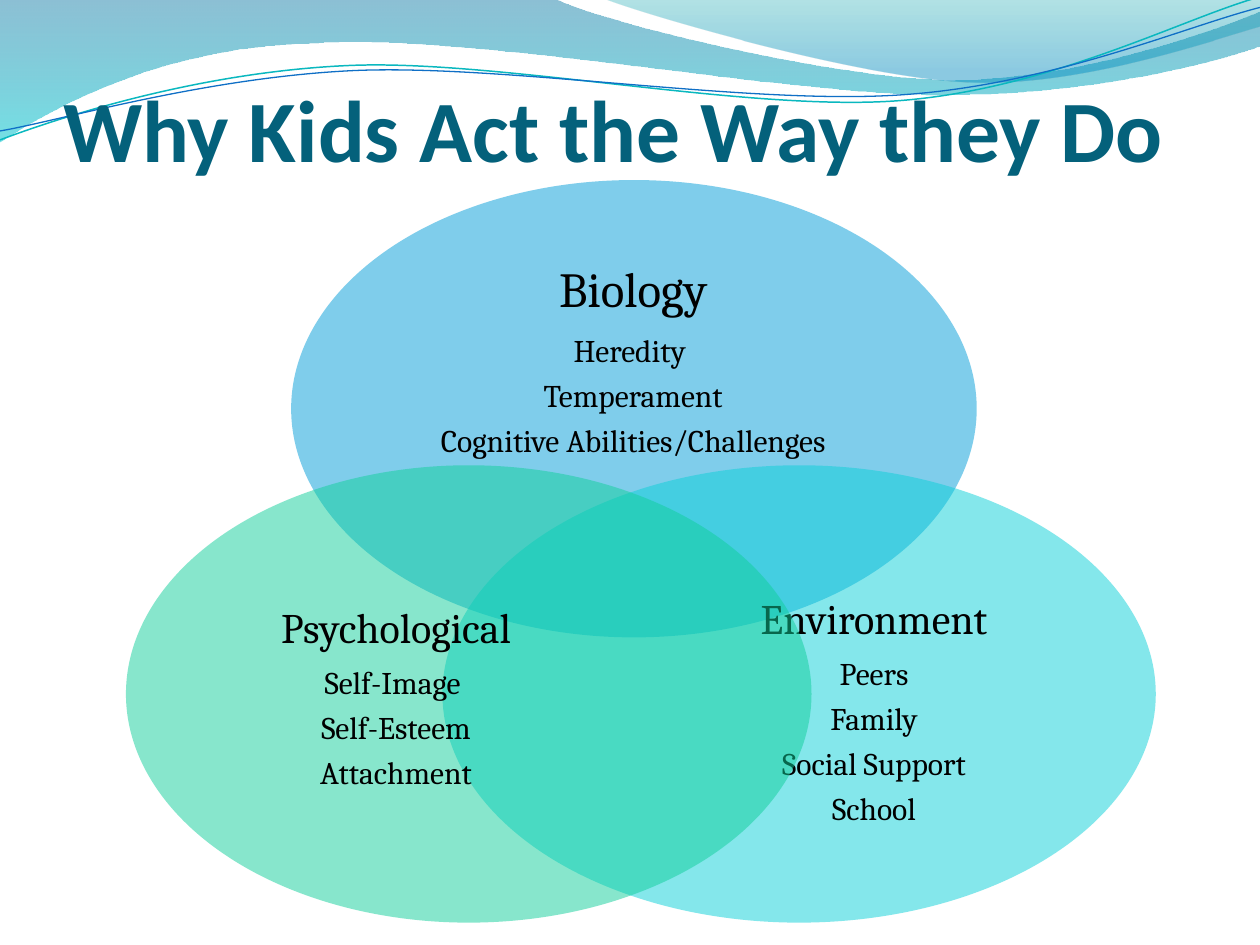
from math import cos, radians, sin

from lxml.etree import SubElement
from pptx import Presentation
from pptx.dml.color import RGBColor
from pptx.enum.shapes import MSO_SHAPE as Shape
from pptx.enum.text import MSO_ANCHOR as Anchor, MSO_AUTO_SIZE as AutoSize, PP_ALIGN as Align
from pptx.oxml.ns import qn
from pptx.util import Cm, Pt

STRAND_TILT = 2.7
STRAND_CENTER = (12.67, 1.48)

BACK_WAVE = [
    [(0, 0)],
    [(11.18, -0.03)],
    [(12.09, 0.43), (16.87, 1.6), (19.25, 1.6)],
    [(21.67, 1.6), (24.33, 0.66), (25.4, 0.23)],
    [(25.43, 0.91)],
    [(24.97, 1.12), (22.1, 1.93), (18.95, 1.91)],
    [(15.8, 1.91), (9.7, 0.71), (6.53, 0.86)],
    [(3.28, 0.91), (1.17, 2.11), (-0.03, 2.87)],
]
FRONT_WAVE = [
    [(12.17, -0.03)],
    [(12.93, 0.28), (17.32, 1.57), (19.53, 1.65)],
    [(21.74, 1.75), (24.41, 0.81), (25.4, 0.53)],
    [(25.4, 0)],
]
TEAL_STRAND = [
    [(0, 2.82)],
    [(1.22, 2.36), (4.01, 1.45), (7.04, 1.32)],
    [(10.03, 1.19), (15.06, 2.26), (18.11, 2.03)],
    [(21.16, 1.8), (23.83, 0.38), (25.35, -0.05)],
]
BLUE_STRAND = [
    [(0, 2.64)],
    [(1.19, 2.44), (4.17, 1.55), (7.19, 1.42)],
    [(10.24, 1.3), (15.16, 2.13), (18.21, 1.91)],
    [(21.23, 1.7), (23.9, 0.53), (25.4, 0.15)],
]

FACTORS = [
    dict(oval=(5.87, 3.63, 13.82, 9.22), color="009DD9",
         label=(7.7, 5.23, 10.13, 4.14), inset=0.11, heading="Biology", size=28,
         causes=["Heredity ", "Temperament", "Cognitive Abilities/Challenges"]),
    dict(oval=(8.92, 9.38, 14.38, 9.22), color="0BD0D9",
         label=(13.3, 11.76, 8.64, 5.08), inset=0.3, heading="Environment", size=24,
         causes=["Peers", "Family", "Social Support", "School"]),
    dict(oval=(2.54, 9.38, 13.82, 9.22), color="10CF9B",
         label=(3.83, 11.76, 8.31, 5.08), inset=0.49, heading="Psychological", size=24,
         causes=["Self-Image ", "Self-Esteem", "Attachment"]),
]


def rgb(value):
    return RGBColor.from_string(value)


def apply(target, values):
    for key, value in values.items():
        setattr(target, key, value)


def turn(point, degrees):
    angle = radians(degrees)
    dx, dy = (value - center for value, center in zip(point, STRAND_CENTER))
    return (STRAND_CENTER[0] + dx * cos(angle) - dy * sin(angle),
            STRAND_CENTER[1] + dx * sin(angle) + dy * cos(angle))


def bend(shape, segments):
    steps = iter(list(shape.element.iter(qn("a:lnTo"))))
    for segment in segments[1:]:
        first, *others = [next(steps) for _ in segment]
        if others:
            first.tag = qn("a:cubicBezTo")
        for other in others:
            first.append(other[0])
            other.getparent().remove(other)


def set_alpha(fill_element, percents):
    for color, percent in zip(fill_element.iter(qn("a:srgbClr")), percents):
        SubElement(color, qn("a:alpha")).set("val", str(percent * 1000))


class Deck:
    title_font = dict(name="Calibri", size=Pt(50), bold=True)
    body_font = "Cambria"
    frame = dict(word_wrap=True, auto_size=AutoSize.NONE, margin_left=0,
                 margin_right=0, margin_bottom=0)

    def __init__(self, slide, ink="000000", title_ink="04617B"):
        self.slide = slide
        self.ink = rgb(ink)
        self.title_ink = rgb(title_ink)

    def outline(self, segments, closed):
        start, *rest = [(Cm(x), Cm(y)) for segment in segments for x, y in segment]
        builder = self.slide.shapes.build_freeform(*start)
        builder.add_line_segments(rest, close=closed)
        shape = builder.convert_to_shape()
        bend(shape, segments)
        shape.shadow.inherit = False
        return shape

    def wave(self, segments, stops):
        shape = self.outline(segments, True)
        shape.line.fill.background()
        shape.fill.gradient()
        shape.fill.gradient_angle = 270
        for stop, (position, color, _) in zip(shape.fill.gradient_stops, stops):
            stop.color.rgb = rgb(color)
            stop.position = position
        set_alpha(shape.element.spPr.find(qn("a:gradFill")), [stop[2] for stop in stops])

    def strand(self, segments, color, width):
        level = [[turn(point, STRAND_TILT) for point in segment] for segment in segments]
        shape = self.outline(level, False)
        shape.rotation = 360 - STRAND_TILT
        shape.fill.background()
        shape.line.color.rgb = rgb(color)
        shape.line.width = Pt(width)

    def title(self, text, box):
        title = self.slide.shapes.title
        title.element.getparent().append(title.element)
        apply(title, dict(zip(("left", "top", "width", "height"), map(Cm, box))))
        title.text = text
        apply(title.text_frame, {**self.frame, "vertical_anchor": Anchor.BOTTOM,
                                 "margin_top": Cm(0.13)})
        heading = title.text_frame.paragraphs[0]
        heading.alignment = Align.LEFT
        apply(heading.runs[0].font, self.title_font)
        heading.runs[0].font.color.rgb = self.title_ink

    def oval(self, box, color):
        shape = self.slide.shapes.add_shape(Shape.OVAL, *map(Cm, box))
        shape.shadow.inherit = False
        shape.line.fill.background()
        shape.fill.solid()
        shape.fill.fore_color.rgb = rgb(color)
        set_alpha(shape.element.spPr.find(qn("a:solidFill")), [50])

    def label(self, box, inset, heading, size, causes):
        frame = self.slide.shapes.add_textbox(*map(Cm, box)).text_frame
        apply(frame, {**self.frame, "vertical_anchor": Anchor.TOP,
                      "margin_top": Cm(inset)})
        lines = [(heading, size)] + [(cause, 18) for cause in causes]
        frame.text = "\n".join(text for text, _ in lines)
        for paragraph, (_, points) in zip(frame.paragraphs, lines):
            apply(paragraph, dict(alignment=Align.CENTER, line_spacing=0.9,
                                  space_after=Pt(points * 0.35)))
            font = paragraph.runs[0].font
            apply(font, dict(name=self.body_font, size=Pt(points)))
            font.color.rgb = self.ink


def main():
    presentation = Presentation()
    apply(presentation, dict(slide_width=Cm(25.4), slide_height=Cm(19.05)))
    deck = Deck(presentation.slides.add_slide(presentation.slide_layouts[5]))
    deck.wave(BACK_WAVE, [(0, "0074A1", 45), (1, "00C6CF", 55)])
    deck.wave(FRONT_WAVE, [(0, "00A1A9", 30), (0.8, "008BBF", 45)])
    deck.strand(TEAL_STRAND, "0AB8BF", 0.85)
    deck.strand(BLUE_STRAND, "0F6FC6", 0.75)
    deck.title("Why Kids Act the Way they Do", (1.27, 0.44, 22.86, 3.18))
    for factor in FACTORS:
        deck.oval(factor["oval"], factor["color"])
        deck.label(factor["label"], factor["inset"], factor["heading"],
                   factor["size"], factor["causes"])
    presentation.save("out.pptx")


if __name__ == "__main__":
    main()
